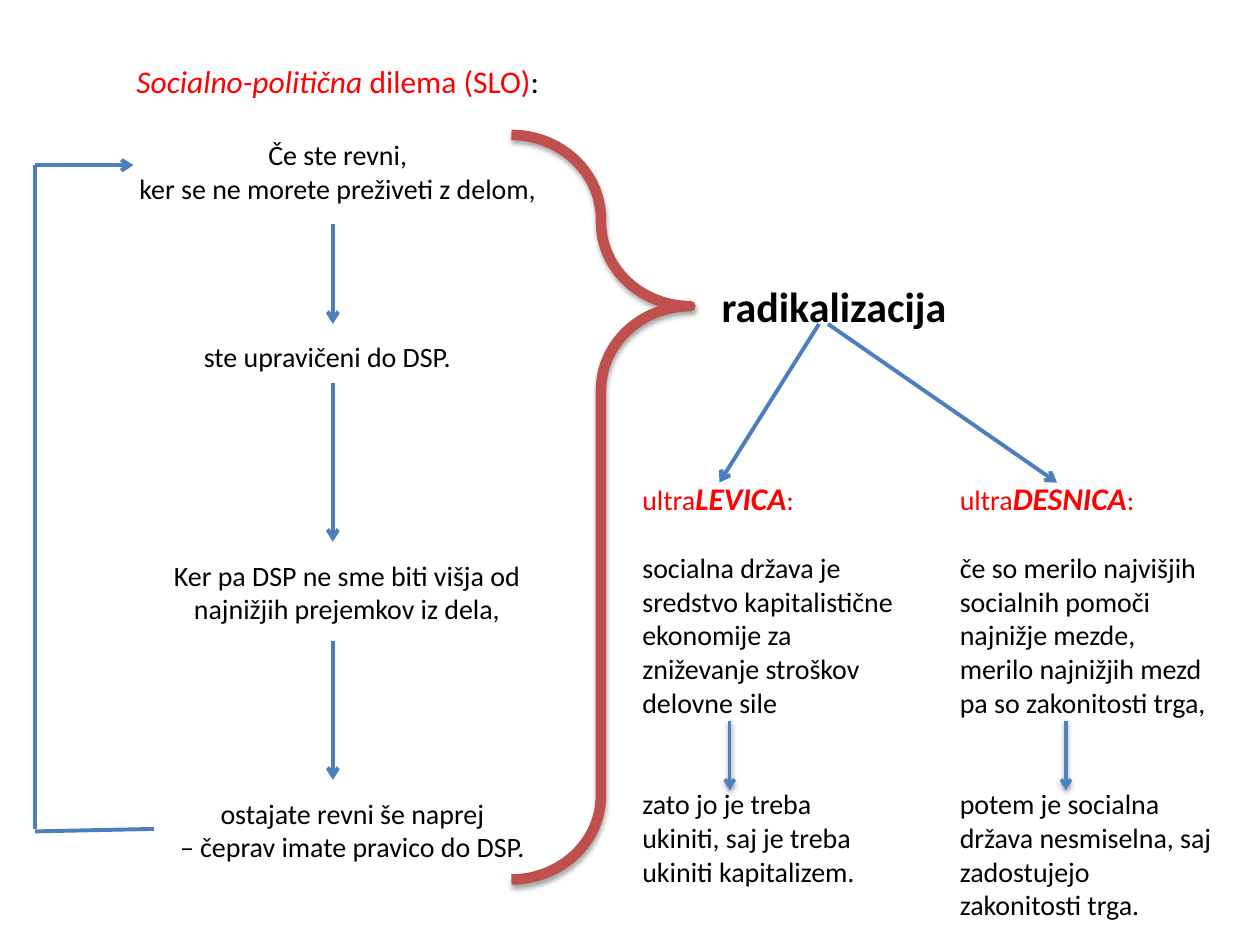
from lxml import etree
from pptx import Presentation
from pptx.dml.color import RGBColor
from pptx.enum.shapes import MSO_CONNECTOR as LineKind, MSO_SHAPE as Preset
from pptx.enum.text import MSO_AUTO_SIZE as AutoSize, PP_ALIGN as Align
from pptx.oxml import parse_xml
from pptx.oxml.ns import nsdecls, qn
from pptx.util import Cm, Pt


def color(code):
    return RGBColor.from_string(code)


def add_effects(item, shadow):
    """Set the effect list: empty, or a shadow of (opacity %, distance pt)."""
    inner = ""
    if shadow:
        opacity, distance = shadow
        inner = (f'<a:outerShdw blurRad="{Pt(3.1)}" dist="{Pt(distance)}" dir="5400000" rotWithShape="0">'
                 f'<a:srgbClr val="000000"><a:alpha val="{opacity * 1000}"/></a:srgbClr></a:outerShdw>')
    item._element.spPr.append(parse_xml(f'<a:effectLst {nsdecls("a")}>{inner}</a:effectLst>'))


BLACK, RED = "000000", "FF0000"
BLUE, BRIGHT_BLUE, BRACE_RED = "4B7EBC", "4F81BD", "C0504D"
LINE_16, LINE_18 = 19.5, 22  # heights of one text line, used as gaps

deck = Presentation()
deck.slide_width, deck.slide_height = Cm(25.4), Cm(19.05)
page = deck.slides.add_slide(deck.slide_layouts[6])

# Texts: box, alignment, paragraphs of (space before, runs);
# a run is (text, size, colour, bold, italic)
center, left = Align.CENTER, Align.LEFT
texts = [
    ((2.11, 1.12, 9.4, 3.18), center, [
        (0, [("Socialno-politična ", 18, RED, False, True),
             ("dilema (SLO)", 18, RED, False, False),
             (":", 18, BLACK, False, False)]),
        (LINE_18, [("Če ste revni,", 16, BLACK, False, False)]),
        (0, [("ker se ne morete preživeti z delom,", 16, BLACK, False, False)])]),
    ((3.3, 6.73, 6.6, 0.94), center, [
        (0, [("ste upravičeni do DSP.", 16, BLACK, False, False)])]),
    ((2.69, 11.13, 8.61, 1.63), center, [
        (0, [("Ker pa DSP ne sme biti višja od najnižjih prejemkov iz dela,", 16, BLACK, False, False)])]),
    ((2.9, 15.93, 8.41, 1.63), center, [
        (0, [("ostajate revni še naprej", 16, BLACK, False, False)]),
        (0, [("– čeprav imate pravico do DSP.", 16, BLACK, False, False)])]),
    ((14.3, 5.54, 5.21, 1.27), left, [
        (0, [("radikalizacija", 24, BLACK, True, False)])]),
]

# The two radical answers share one layout
answers = [
    (12.7, 8.56, "LEVICA",
     "socialna država je sredstvo kapitalistične ekonomije za zniževanje stroškov delovne sile",
     "zato jo je treba ukiniti, saj je treba ukiniti kapitalizem."),
    (19.1, 9.14, "DESNICA",
     "če so merilo najvišjih socialnih pomoči najnižje mezde, merilo najnižjih mezd pa so zakonitosti trga,",
     "potem je socialna država nesmiselna, saj zadostujejo zakonitosti trga."),
]
for x, height, side, reason, conclusion in answers:
    texts.append(((x, 9.53, 5.59, height), left, [
        (0, [("ultra", 16, RED, False, False),
             (side, 18, RED, True, True),
             (":", 16, RED, False, False)]),
        (LINE_16, [(reason, 16, BLACK, False, False)]),
        (2 * LINE_16, [(conclusion, 16, BLACK, False, False)])]))

for bounds, alignment, paragraphs in texts:
    box = page.shapes.add_textbox(*[Cm(value) for value in bounds])
    frame = box.text_frame
    frame.word_wrap = True
    frame.auto_size = AutoSize.SHAPE_TO_FIT_TEXT
    for index, (gap, spans) in enumerate(paragraphs):
        para = frame.add_paragraph() if index else frame.paragraphs[0]
        para.alignment = alignment
        para.space_before = Pt(gap)
        for text, size, code, bold, italic in spans:
            span = para.add_run()
            span.text = text
            span.font.name = "Calibri"
            span.font.size = Pt(size)
            span.font.bold, span.font.italic = bold, italic
            span.font.color.rgb = color(code)

# Brace that gathers the dilemma
brace = page.shapes.add_shape(Preset.RIGHT_BRACE, Cm(10.31), Cm(2.72), Cm(3.61), Cm(15.01))
brace.adjustments[0], brace.adjustments[1] = 0.47, 0.23
brace.fill.background()
brace.line.color.rgb = color(BRACE_RED)
brace.line.width = Pt(6)
add_effects(brace, (35, 1.8))

# Lines: start, end, arrowhead, colour, width, shadow
step_x, loop_x, loop_top = 6.71, 0.71, 3.33
lines = [((step_x, top), (step_x, bottom), True, BLUE, 2.25, None)
         for top, bottom in [(4.52, 6.53), (7.72, 10.92), (12.93, 15.72)]]
lines += [
    # Loop back to the first step
    ((loop_x, 16.76), (3.1, 16.71), False, BLUE, 2.25, None),
    ((loop_x, loop_top), (loop_x, 16.71), False, BLUE, 2.25, None),
    ((loop_x, loop_top), (2.69, loop_top), True, BLUE, 2.25, None),
    # Branches of radicalisation
    ((16.51, 6.53), (14.5, 9.73), True, BLUE, 2.25, None),
    ((16.69, 6.53), (21.31, 9.73), True, BLUE, 2.25, None),
]
# From reason to conclusion
lines += [((x, 14.53), (x, 15.93), True, BRIGHT_BLUE, 2, (38, 1.6)) for x in (14.71, 21.49)]

for start, end, arrow, code, width, shadow in lines:
    line = page.shapes.add_connector(LineKind.STRAIGHT, *[Cm(value) for value in start + end])
    line.line.color.rgb = color(code)
    line.line.width = Pt(width)
    if arrow:
        outline = line._element.spPr.find(qn("a:ln"))
        etree.SubElement(outline, qn("a:tailEnd")).set("type", "arrow")
    add_effects(line, shadow)

deck.save("out.pptx")
